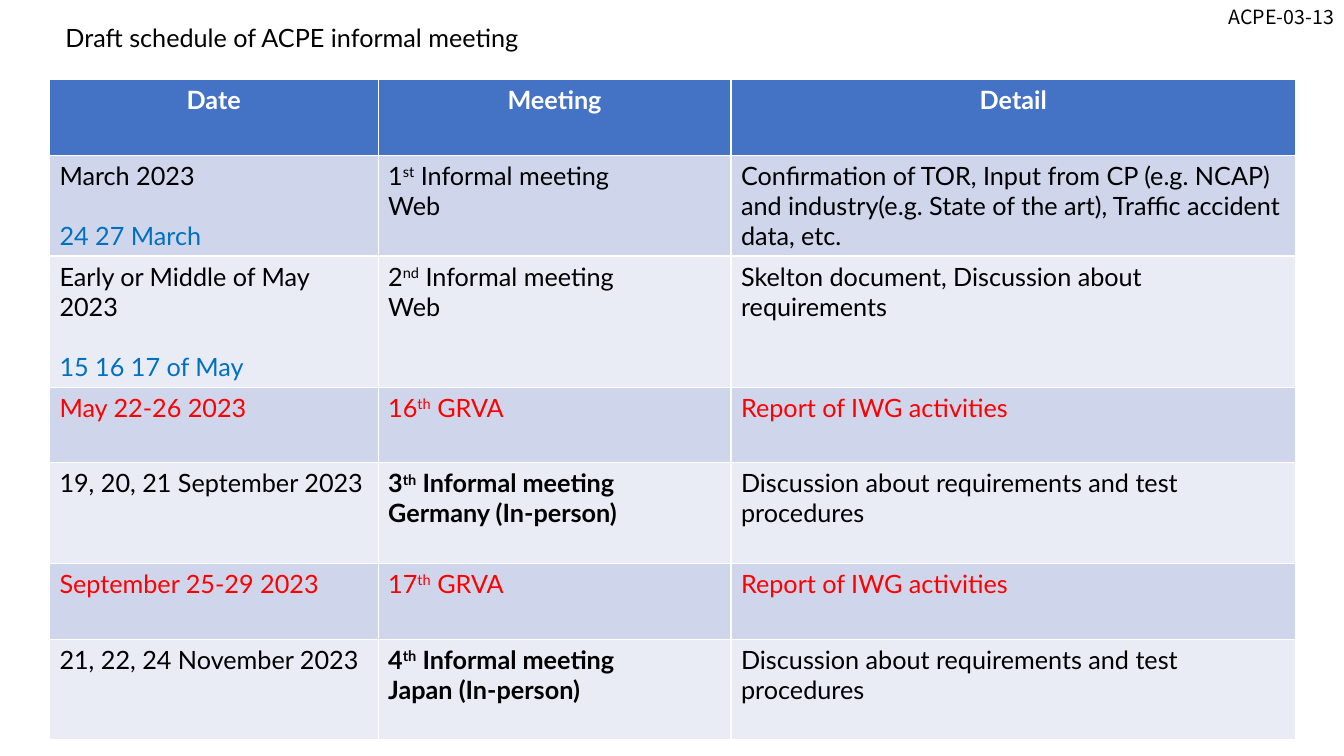
from pptx import Presentation
from pptx.dml.color import RGBColor
from pptx.enum.text import PP_ALIGN
from pptx.util import Inches, Pt

LEFT = PP_ALIGN.LEFT
CENTER = PP_ALIGN.CENTER
RIGHT = PP_ALIGN.RIGHT

COLORS = {
    "header": "4472C4",
    "odd": "CFD5EA",
    "even": "E9EBF5",
    "white": "FFFFFF",
    "black": "000000",
    "blue": "0070C0",
    "red": "FF0000",
}
LATIN = "Lato"
CODE_FONT = "Noto Sans CJK JP"
TEXT_SIZE = 18
BLANK_LINE = Pt(21.6)

HEADINGS = ["Date", "Meeting", "Detail"]
COLUMN_WIDTHS = [3.26, 3.5, 5.6]
HEADER_HEIGHT = 0.75
TESTING = "Discussion about requirements and test procedures"
REPORT = "Report of IWG activities"

INFORMAL_MEETINGS = "Informal meeting"
GRVA = "GRVA"

SCHEDULE = [
    (1.0, "March 2023", "24 27 March", ("1", "st", INFORMAL_MEETINGS), "Web",
     "Confirmation of TOR, Input from CP (e.g. NCAP) and industry"
     "(e.g. State of the art), Traffic accident data, etc."),
    (1.3, "Early or Middle of May 2023", "15 16 17 of May",
     ("2", "nd", INFORMAL_MEETINGS), "Web",
     "Skelton document, Discussion about requirements"),
    (0.75, "May 22-26 2023", None, ("16", "th", GRVA), None, REPORT),
    (1.0, "19, 20, 21 September 2023", None,
     ("3", "th", INFORMAL_MEETINGS), "Germany (In-person)", TESTING),
    (0.75, "September 25-29 2023", None, ("17", "th", GRVA), None, REPORT),
    (1.0, "21, 22, 24 November 2023", None,
     ("4", "th", INFORMAL_MEETINGS), "Japan (In-person)", TESTING),
]


def rgb(name):
    return RGBColor.from_string(COLORS[name])


def style(paragraph, color="black", bold=False, align=LEFT,
          size=TEXT_SIZE, font=LATIN):
    paragraph.alignment = align
    paragraph.font.name = font
    paragraph.font.size = Pt(size)
    paragraph.font.bold = bold
    paragraph.font.color.rgb = rgb(color)


def add_label(slide, text, left, top, width, height, **look):
    frame = slide.shapes.add_textbox(
        Inches(left), Inches(top), Inches(width), Inches(height)).text_frame
    frame.word_wrap = True
    frame.text = text
    style(frame.paragraphs[0], **look)


def fill_cell(cell, fill, text="", **look):
    cell.fill.solid()
    cell.fill.fore_color.rgb = rgb(fill)
    paragraph = cell.text_frame.paragraphs[0]
    if text:
        paragraph.text = text
    style(paragraph, **look)
    return paragraph


def add_line(cell, text, **look):
    paragraph = cell.text_frame.add_paragraph()
    paragraph.text = text
    style(paragraph, **look)
    return paragraph


def add_ordinal(paragraph, number, suffix, name):
    paragraph.add_run().text = number
    raised = paragraph.add_run()
    raised.text = suffix
    raised._r.get_or_add_rPr().set("baseline", "30000")
    paragraph.add_run().text = f" {name}"


def fill_meeting_row(cells, fill, date, chosen_days, ordinal, venue, detail):
    color = "red" if ordinal[-1] == GRVA else "black"
    bold = venue is not None and "In-person" in venue
    date_cell, meeting_cell, detail_cell = cells
    fill_cell(date_cell, fill, date, color=color)
    if chosen_days:
        add_line(date_cell, chosen_days, color="blue").space_before = BLANK_LINE
    meeting = fill_cell(meeting_cell, fill, color=color, bold=bold)
    add_ordinal(meeting, *ordinal)
    if venue:
        add_line(meeting_cell, venue, color=color, bold=bold)
    fill_cell(detail_cell, fill, detail, color=color)


def add_schedule(slide):
    heights = [HEADER_HEIGHT] + [meeting[0] for meeting in SCHEDULE]
    table = slide.shapes.add_table(
        len(heights), len(HEADINGS), Inches(0.49), Inches(0.79),
        Inches(sum(COLUMN_WIDTHS)), Inches(sum(heights))).table
    for column, width in zip(table.columns, COLUMN_WIDTHS):
        column.width = Inches(width)
    for row, height in zip(table.rows, heights):
        row.height = Inches(height)
    for cell, heading in zip(table.rows[0].cells, HEADINGS):
        fill_cell(cell, "header", heading, color="white", bold=True, align=CENTER)
    for index, (_, *meeting) in enumerate(SCHEDULE, start=1):
        fill = "odd" if index % 2 else "even"
        fill_meeting_row(table.rows[index].cells, fill, *meeting)


def main():
    deck = Presentation()
    deck.slide_width = Inches(13.33)
    deck.slide_height = Inches(7.5)
    slide = deck.slides.add_slide(deck.slide_layouts[6])
    add_schedule(slide)
    add_label(slide, "ACPE-03-13", 11.8, 0, 1.53, 0.34,
              align=RIGHT, size=14, font=CODE_FONT)
    add_label(slide, "Draft schedule of ACPE informal meeting",
              0.55, 0.17, 9.98, 0.4)
    deck.save("out.pptx")


if __name__ == "__main__":
    main()
